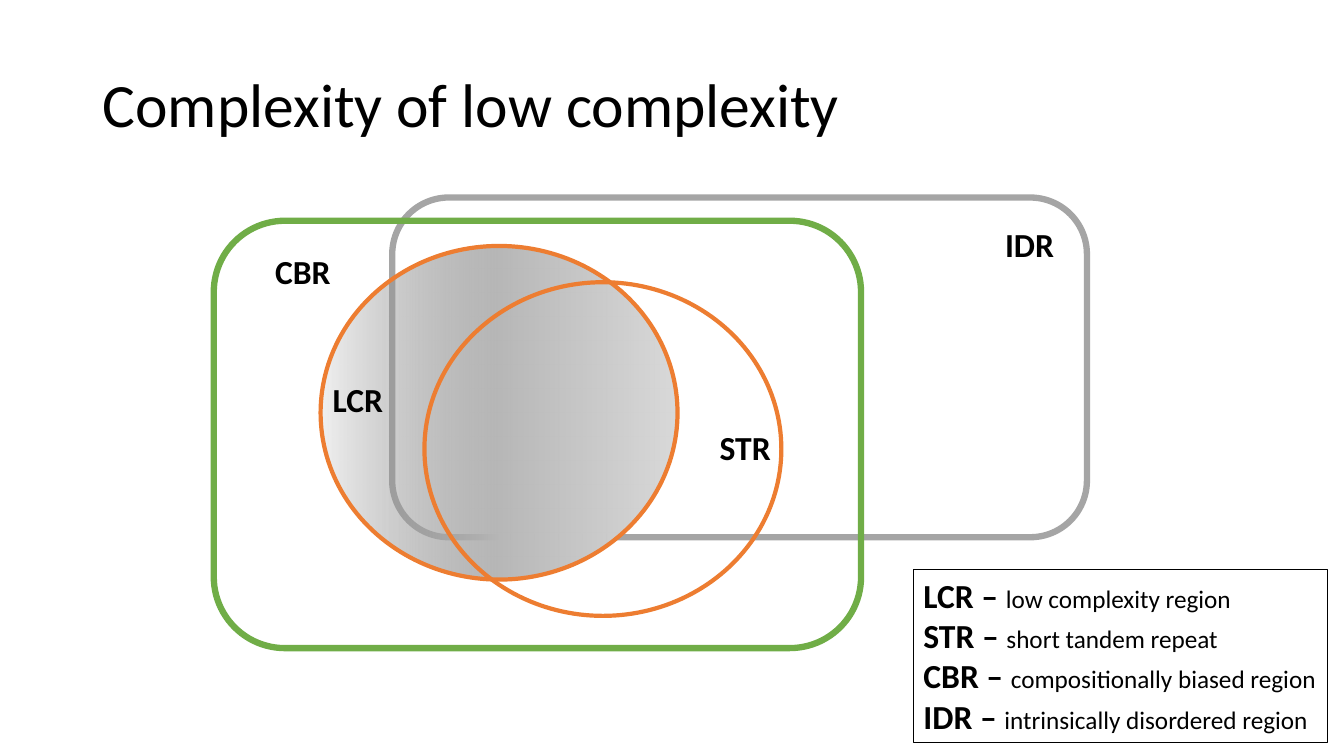
from pptx import Presentation
from pptx.dml.color import RGBColor
from pptx.enum import shapes, text
from pptx.oxml import parse_xml
from pptx.oxml.ns import nsdecls, qn
from pptx.util import Inches, Pt

COLORS = {
    "text": "000000",
    "disordered": "A5A5A5",
    "biased": "70AD47",
    "repeat": "ED7D31",
    "shade_left": "808080",
    "shade_middle": "B7B7B7",
    "shade_right": "D9D9D9",
}

prs = Presentation()
prs.slide_width, prs.slide_height = Inches(13.33), Inches(7.5)
slide = prs.slides.add_slide(prs.slide_layouts[6])


def add_outline(kind, box, color, width):
    """Add an unfilled preset shape with a coloured outline."""
    outline = slide.shapes.add_shape(kind, *map(Inches, box))
    outline.shadow.inherit = False
    outline.fill.background()
    outline.line.color.rgb = RGBColor.from_string(COLORS[color])
    outline.line.width = Pt(width)
    return outline


def add_run(paragraph, wording, size, bold=False):
    run = paragraph.add_run()
    run.text = wording
    run.font.name = "Calibri"
    run.font.size = Pt(size)
    run.font.bold = bold
    run.font.color.rgb = RGBColor.from_string(COLORS["text"])


# Overlapping regions, back to front
rounded, oval = shapes.MSO_SHAPE.ROUNDED_RECTANGLE, shapes.MSO_SHAPE.OVAL
add_outline(rounded, (3.89, 1.96, 6.89, 3.37), "disordered", 4.5)
add_outline(rounded, (2.12, 2.19, 6.42, 4.24), "biased", 4.5)
low_complexity = add_outline(oval, (3.18, 2.44, 3.54, 3.31), "repeat", 3)
add_outline(oval, (4.21, 2.8, 3.54, 3.31), "repeat", 3)

# Gradient that fades out towards the left edge
low_complexity.fill.gradient()
low_complexity.fill.gradient_angle = 0
stops = low_complexity._element.spPr.find(qn("a:gradFill")).find(qn("a:gsLst"))
for stop in list(stops):
    stops.remove(stop)
for percent, shade, opacity in [
    (0, "shade_left", 11),
    (50, "shade_middle", 100),
    (100, "shade_right", 100),
]:
    stops.append(parse_xml(
        f'<a:gs {nsdecls("a")} pos="{percent * 1000}"><a:srgbClr val="{COLORS[shade]}">'
        f'<a:alpha val="{opacity * 1000}"/></a:srgbClr></a:gs>'
    ))

# Title
title = slide.shapes.add_textbox(Inches(0.92), Inches(0.34), Inches(11.5), Inches(1.45)).text_frame
title.word_wrap = True
title.vertical_anchor = text.MSO_ANCHOR.MIDDLE
title.paragraphs[0].line_spacing = 0.9
add_run(title.paragraphs[0], "Complexity of low complexity", 44)

# Legend
legend = add_outline(shapes.MSO_SHAPE.RECTANGLE, (9.06, 5.65, 4.11, 1.72), "text", 0.75).text_frame
legend.word_wrap = False
legend.vertical_anchor = text.MSO_ANCHOR.TOP
meanings = {
    "LCR": "low complexity region",
    "STR": "short tandem repeat",
    "CBR": "compositionally biased region",
    "IDR": "intrinsically disordered region",
}
for index, (abbreviation, meaning) in enumerate(meanings.items()):
    entry = legend.add_paragraph() if index else legend.paragraphs[0]
    entry.alignment = text.PP_ALIGN.LEFT
    add_run(entry, f"{abbreviation} – ", 24, bold=True)
    add_run(entry, meaning, 18)

# Region labels
for abbreviation, left, top in [
    ("LCR", 3.2, 3.71),
    ("STR", 7.04, 4.19),
    ("IDR", 9.87, 2.17),
    ("CBR", 2.63, 2.44),
]:
    label = slide.shapes.add_textbox(Inches(left), Inches(top), Inches(0.76), Inches(0.5)).text_frame
    label.word_wrap = False
    add_run(label.paragraphs[0], abbreviation, 24, bold=True)

prs.save("out.pptx")
